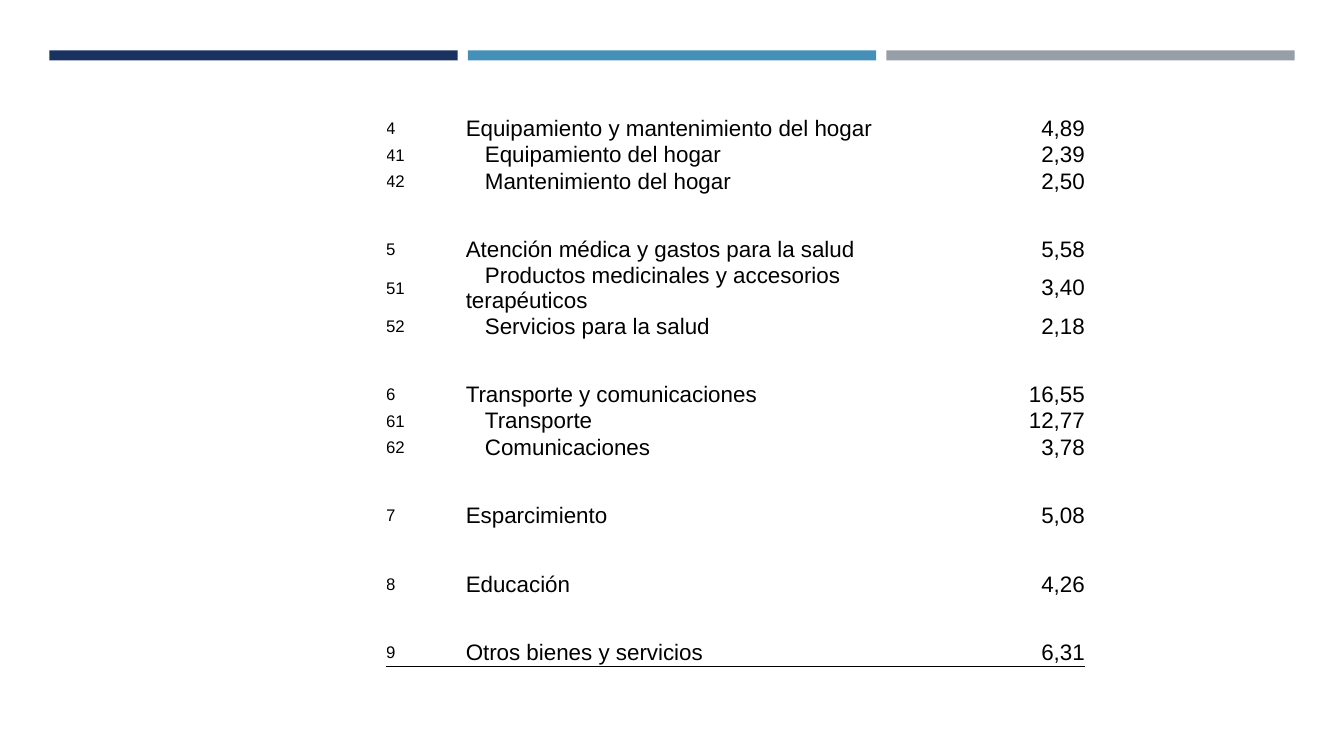
from lxml import etree
from pptx import Presentation
from pptx.dml.color import RGBColor
from pptx.enum.shapes import MSO_SHAPE
from pptx.enum.text import MSO_ANCHOR, PP_ALIGN
from pptx.oxml.ns import qn
from pptx.util import Inches, Pt

RECTANGLE = MSO_SHAPE.RECTANGLE
MIDDLE = MSO_ANCHOR.MIDDLE
LEFT, RIGHT = PP_ALIGN.LEFT, PP_ALIGN.RIGHT

COLORS = {"navy": "1A3260", "blue": "4590B8", "gray": "969FA7", "text": "000000"}
FONT = "Arial"

# Header bars: one grid column each
BAR_LEFT, BAR_TOP, BAR_PITCH = 0.49, 0.5, 4.15
BAR_WIDTH, BAR_HEIGHT = 4.05, 0.1

# Table grid; the label covers the three middle columns
TABLE_LEFT, TABLE_TOP = 3.83, 1.15
COLUMN_WIDTHS = [0.79, 1, 2.66, 1.14, 1.34]
CODE, LABEL, LABEL_END, WEIGHT = 0, 1, 3, 4
ROW_HEIGHT, TALL_HEIGHT, GAP_HEIGHT = 0.26, 0.5, 0.42
SUBITEM_INDENT = 0.19

# Each group is followed by an empty row, except the last
GROUPS = [
    [("4", "Equipamiento y mantenimiento del hogar", "4,89"),
     ("41", "Equipamiento del hogar", "2,39"),
     ("42", "Mantenimiento del hogar", "2,50")],
    [("5", "Atención médica y gastos para la salud", "5,58"),
     ("51", "Productos medicinales y accesorios terapéuticos", "3,40"),
     ("52", "Servicios para la salud", "2,18")],
    [("6", "Transporte y comunicaciones", "16,55"),
     ("61", "Transporte", "12,77"),
     ("62", "Comunicaciones", "3,78")],
    [("7", "Esparcimiento", "5,08")],
    [("8", "Educación", "4,26")],
    [("9", "Otros bienes y servicios", "6,31")],
]
TWO_LINE_CODES = {"51"}


def add_bar(page, column, color):
    bar = page.shapes.add_shape(
        RECTANGLE, Inches(BAR_LEFT + column * BAR_PITCH), Inches(BAR_TOP),
        Inches(BAR_WIDTH), Inches(BAR_HEIGHT))
    bar.shadow.inherit = False
    bar.fill.solid()
    bar.fill.fore_color.rgb = RGBColor.from_string(COLORS[color])
    bar.line.fill.background()


def clear_cell(cell):
    cell.fill.background()
    cell.margin_left = cell.margin_right = 0
    cell.margin_top = cell.margin_bottom = 0
    cell.vertical_anchor = MIDDLE


def write_cell(cell, text, size, align=LEFT, indent=0):
    para = cell.text_frame.paragraphs[0]
    para.text = text
    para.alignment = align
    para.font.name = FONT
    para.font.size = Pt(size)
    para.font.color.rgb = RGBColor.from_string(COLORS["text"])
    if indent:
        properties = para._p.get_or_add_pPr()
        properties.set("marL", "0")
        properties.set("indent", str(Inches(indent)))


def underline_cell(cell):
    border = etree.Element(qn("a:lnB"), w=str(Pt(0.5)))
    fill = etree.SubElement(border, qn("a:solidFill"))
    etree.SubElement(fill, qn("a:srgbClr"), val=COLORS["text"])
    # Borders come before the fill in the cell properties
    cell._tc.get_or_add_tcPr().insert(0, border)


def add_weights_table(page):
    rows = []
    for group in GROUPS:
        rows += group + [None]
    rows.pop()

    frame = page.shapes.add_table(
        len(rows), len(COLUMN_WIDTHS), Inches(TABLE_LEFT), Inches(TABLE_TOP),
        Inches(sum(COLUMN_WIDTHS)), Inches(ROW_HEIGHT * len(rows)))
    table = frame.table
    table.first_row = table.horz_banding = False
    for column, width in zip(table.columns, COLUMN_WIDTHS):
        column.width = Inches(width)

    for index, entry in enumerate(rows):
        row = table.rows[index]
        for cell in row.cells:
            clear_cell(cell)
        table.cell(index, LABEL).merge(table.cell(index, LABEL_END))
        if entry is None:
            row.height = Inches(GAP_HEIGHT)
            continue
        code, label, weight = entry
        row.height = Inches(TALL_HEIGHT if code in TWO_LINE_CODES else ROW_HEIGHT)
        indent = SUBITEM_INDENT if len(code) > 1 else 0
        write_cell(table.cell(index, CODE), code, 12)
        write_cell(table.cell(index, LABEL), label, 16, indent=indent)
        write_cell(table.cell(index, WEIGHT), weight, 16, RIGHT)

    # Closing rule under the last row
    for cell in table.rows[len(rows) - 1].cells:
        underline_cell(cell)


def main():
    deck = Presentation()
    deck.slide_width, deck.slide_height = Inches(13.33), Inches(7.5)
    page = deck.slides.add_slide(deck.slide_layouts[6])
    for column, color in enumerate(["navy", "blue", "gray"]):
        add_bar(page, column, color)
    add_weights_table(page)
    deck.save("out.pptx")


if __name__ == "__main__":
    main()
